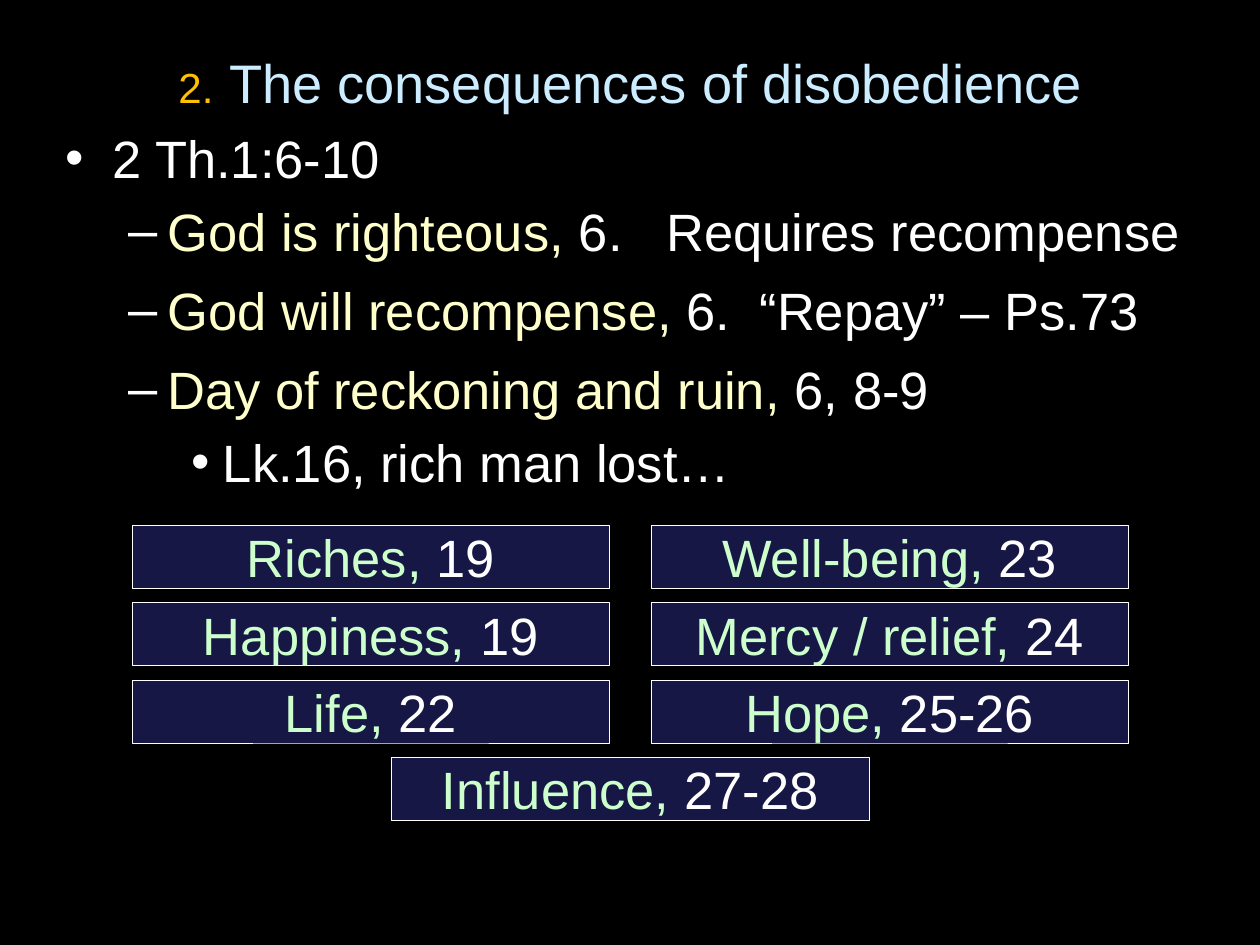
from lxml import etree
from pptx import Presentation
from pptx import util as u
from pptx.dml.color import RGBColor
from pptx.enum import shapes, text
from pptx.oxml.ns import qn

BLACK = RGBColor(0x00, 0x00, 0x00)
WHITE = RGBColor(0xFF, 0xFF, 0xFF)
GOLD = RGBColor(0xFF, 0xC0, 0x00)
SKY = RGBColor(0xCC, 0xEC, 0xFF)
CREAM = RGBColor(0xFF, 0xFF, 0xCC)
MINT = RGBColor(0xCC, 0xFF, 0xCC)
NAVY = RGBColor(0x17, 0x17, 0x45)

FONT = "Arial"
SIZE = 30

HEADING = [("2.", GOLD, 24), (" ", WHITE, 32),
           ("The consequences of disobedience", SKY, 31)]

# (level, space after in points, runs)
POINTS = [
    (0, 0, [("2 Th.1:6-10", WHITE)]),
    (1, 3, [("God is righteous, ", CREAM), ("6.   Requires recompense", WHITE)]),
    (1, 3, [("God will recompense, ", CREAM), ("6.  “Repay” – Ps.73", WHITE)]),
    (1, 0, [("Day of reckoning and ruin, ", CREAM), ("6, 8-9", WHITE)]),
    (2, 3, [("Lk.16, rich man lost…", WHITE)]),
]

# (left margin, hanging indent) for each level
INDENTS = [(u.Cm(0.95), u.Cm(-0.95)),
           (u.Cm(2.06), u.Cm(-0.79)),
           (u.Cm(3.18), u.Cm(-0.64))]

LOSSES = [
    [("Riches, ", "19"), ("Well-being, ", "23")],
    [("Happiness, ", "19"), ("Mercy / relief, ", "24")],
    [("Life, ", "22"), ("Hope, ", "25-26")],
    [("Influence, ", "27-28")],
]


def add_run(p, words, color, size=SIZE):
    r = p.add_run()
    r.text = words
    r.font.name = FONT
    r.font.size = u.Pt(size)
    r.font.color.rgb = color


def set_indent(p, margin, indent):
    pPr = p._p.get_or_add_pPr()
    pPr.set("marL", str(int(margin)))
    pPr.set("indent", str(int(indent)))
    return pPr


def fill_body(sp, left, top, width, height):
    """Place the body placeholder and write the heading and the list in it."""
    sp.left, sp.top, sp.width, sp.height = left, top, width, height
    tf = sp.text_frame
    tf.auto_size = text.MSO_AUTO_SIZE.NONE

    p = tf.paragraphs[0]
    p.alignment = text.PP_ALIGN.CENTER
    etree.SubElement(set_indent(p, 0, 0), qn("a:buNone"))
    for run in HEADING:
        add_run(p, *run)

    for level, after, runs in POINTS:
        p = tf.add_paragraph()
        p.level = level
        p.space_after = u.Pt(after)
        pPr = set_indent(p, *INDENTS[level])
        bullet_color = etree.SubElement(pPr, qn("a:buClr"))
        etree.SubElement(bullet_color, qn("a:srgbClr"), val=str(WHITE))
        for run in runs:
            add_run(p, *run)


def add_loss(slide, left, top, width, height, loss, verse):
    sp = slide.shapes.add_shape(shapes.MSO_SHAPE.RECTANGLE,
                                left, top, width, height)
    sp.shadow.inherit = False
    sp.fill.solid()
    sp.fill.fore_color.rgb = NAVY
    sp.line.color.rgb = WHITE
    sp.line.width = u.Pt(0.25)
    tf = sp.text_frame
    tf.vertical_anchor = text.MSO_ANCHOR.MIDDLE
    p = tf.paragraphs[0]
    p.alignment = text.PP_ALIGN.CENTER
    add_run(p, loss, MINT)
    add_run(p, verse, WHITE)


def add_losses(slide, left, top, width, height):
    """Fill the box with rows of boxes, each row centred."""
    box_w, box_h, gap = u.Cm(9.63), u.Cm(1.27), u.Cm(0.83)
    pitch = (height - box_h) / (len(LOSSES) - 1)
    for i, row in enumerate(LOSSES):
        row_w = len(row) * box_w + (len(row) - 1) * gap
        x = left + (width - row_w) / 2
        for j, (loss, verse) in enumerate(row):
            add_loss(slide, int(x + j * (box_w + gap)), int(top + i * pitch),
                     box_w, box_h, loss, verse)


def main():
    prs = Presentation()
    prs.slide_width, prs.slide_height = u.Cm(25.4), u.Cm(19.05)
    slide = prs.slides.add_slide(prs.slide_layouts[1])
    slide.background.fill.solid()
    slide.background.fill.fore_color.rgb = BLACK

    title = slide.shapes.title
    title.element.getparent().remove(title.element)
    fill_body(slide.placeholders[1], u.Cm(1.06), u.Cm(0.84),
              u.Cm(23.28), u.Cm(17.15))
    add_losses(slide, u.Cm(2.66), u.Cm(10.59), u.Cm(20.09), u.Cm(5.95))
    prs.save("out.pptx")


if __name__ == "__main__":
    main()
